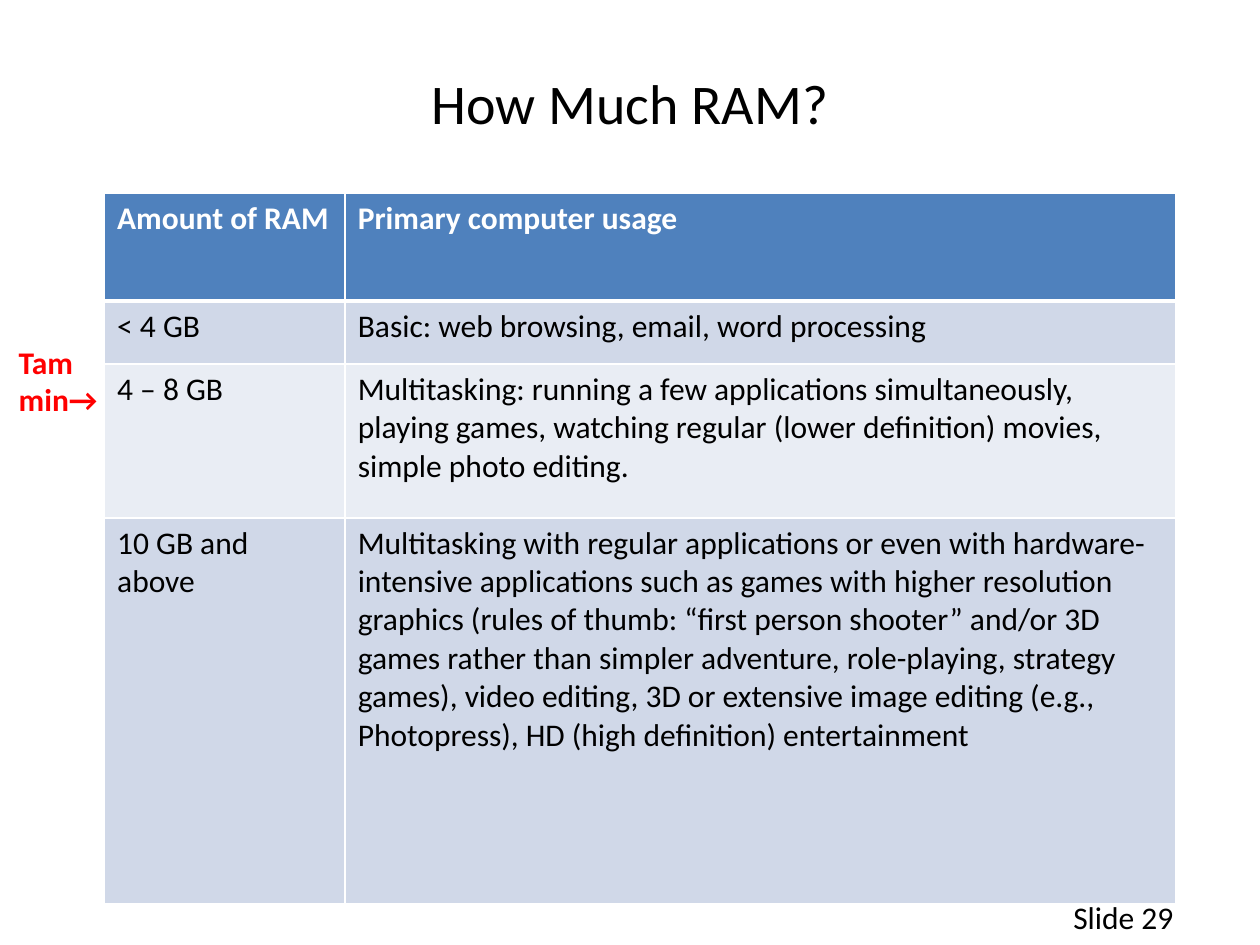
from pptx import Presentation
from pptx.dml.color import RGBColor
from pptx.enum.text import MSO_ANCHOR, PP_ALIGN
from pptx.oxml import parse_xml
from pptx.oxml.ns import nsdecls
from pptx.util import Inches

from pptx.util import Pt

WIDE, HIGH = Inches(10), Inches(7.5)
COLORS = {
    "head": "4F81BD",
    "odd": "D0D8E8",
    "even": "E9EDF4",
    "white": "FFFFFF",
    "black": "000000",
    "red": "FF0000",
}
COLS = (1.91, 6.59)
ROWS = (0.86, 0.5, 1.22, 3.06)
USAGE = (
    ("Amount of RAM", "Primary computer usage"),
    ("< 4 GB", "Basic: web browsing, email, word processing"),
    ("4 – 8 GB",
     "Multitasking: running a few applications simultaneously, playing games, "
     "watching regular (lower definition) movies, simple photo editing."),
    ("10 GB and above",
     "Multitasking with regular applications or even with hardware-intensive "
     "applications such as games with higher resolution graphics (rules of "
     "thumb: “first person shooter” and/or 3D games rather than simpler "
     "adventure, role-playing, strategy games), video editing, 3D or extensive "
     "image editing (e.g., Photopress), HD (high definition) entertainment"),
)


def color(name):
    return RGBColor.from_string(COLORS[name])


def write(frame, text, size=18, ink="black", bold=False,
          align=PP_ALIGN.LEFT, anchor=MSO_ANCHOR.TOP):
    frame.word_wrap = True
    frame.vertical_anchor = anchor
    frame.text = text
    for para in frame.paragraphs:
        para.alignment = align
        for run in para.runs:
            font = run.font
            font.name, font.size, font.bold = "Calibri", Pt(size), bold
            font.color.rgb = color(ink)


def label(slide, text, x, y, w, h, **style):
    """Add a text box placed by shares of the slide's size."""
    box = slide.shapes.add_textbox(
        int(x * WIDE), int(y * HIGH), int(w * WIDE), int(h * HIGH))
    write(box.text_frame, text, **style)


def edge(cell, **widths):
    """Draw white cell borders; each side takes a width in points."""
    props = cell._tc.get_or_add_tcPr()
    for spot, (side, width) in enumerate(widths.items()):
        props.insert(spot, parse_xml(
            f'<a:ln{side} {nsdecls("a")} w="{Pt(width)}"><a:solidFill>'
            f'<a:srgbClr val="{COLORS["white"]}"/></a:solidFill></a:ln{side}>'))


def grid(slide, x, y):
    """Add the RAM table with its corner at shares x, y of the slide."""
    table = slide.shapes.add_table(
        len(ROWS), len(COLS), int(x * WIDE), int(y * HIGH),
        Inches(sum(COLS)), Inches(sum(ROWS))).table
    for col, width in zip(table.columns, COLS):
        col.width = Inches(width)
    for i, (row, height) in enumerate(zip(table.rows, ROWS)):
        row.height = Inches(height)
        head = i == 0
        fill = "head" if head else "odd" if i % 2 else "even"
        for cell, text in zip(row.cells, USAGE[i]):
            write(cell.text_frame, text, bold=head,
                  ink="white" if head else "black")
            cell.fill.solid()
            cell.fill.fore_color.rgb = color(fill)
            edge(cell, L=1, R=1, T=3 if i == 1 else 1, B=3 if head else 1)


def main():
    deck = Presentation()
    deck.slide_width, deck.slide_height = WIDE, HIGH
    slide = deck.slides.add_slide(deck.slide_layouts[6])
    label(slide, "Slide 29", 0.842, 0.944, 0.15, 0.056)
    label(slide, "How Much RAM?", 0.05, 0.04, 0.9, 0.137, size=32,
          align=PP_ALIGN.CENTER, anchor=MSO_ANCHOR.MIDDLE)
    grid(slide, 0.083, 0.204)
    label(slide, "Tam\nmin→", 0.005, 0.356, 0.142, 0.095,
          ink="red", bold=True)
    deck.save("out.pptx")


if __name__ == "__main__":
    main()
